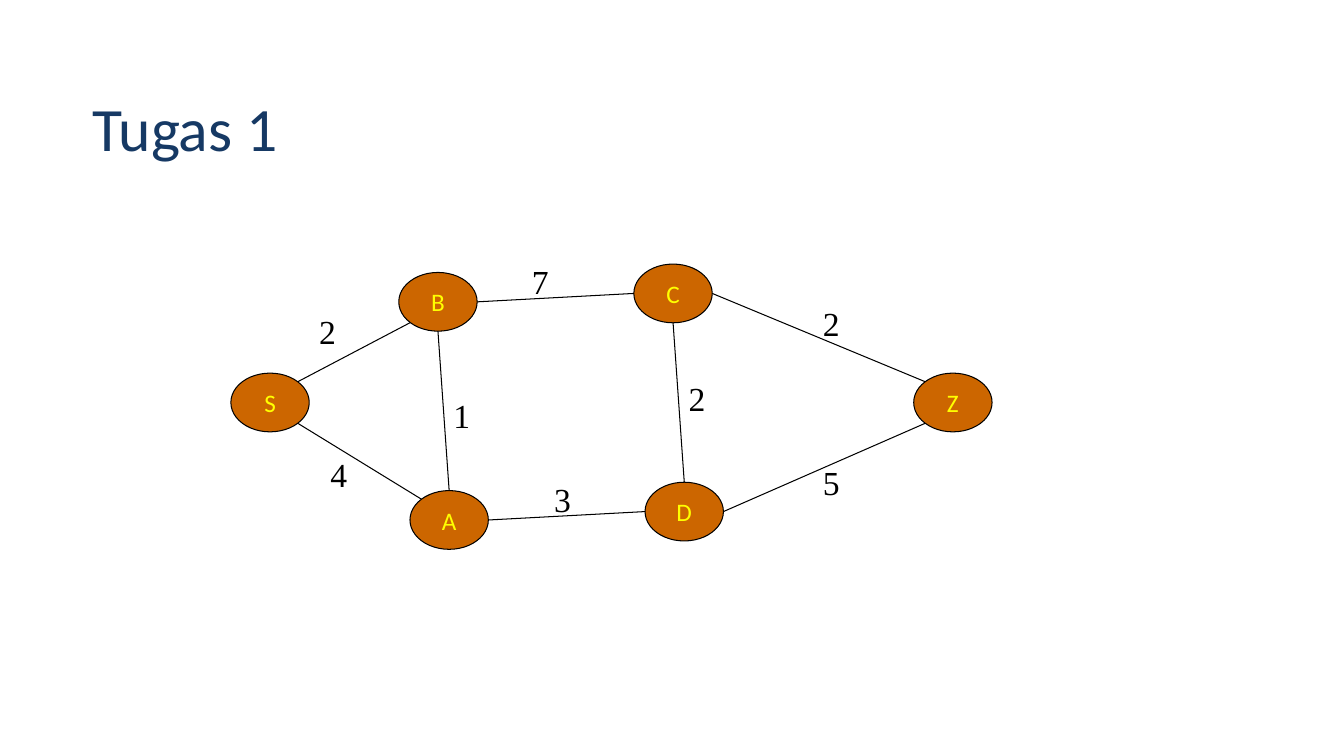
from math import cos, radians, sin

from lxml.etree import SubElement
from pptx import Presentation
from pptx.dml.color import RGBColor
from pptx.enum.shapes import MSO_CONNECTOR, MSO_SHAPE
from pptx.enum.text import MSO_ANCHOR, MSO_AUTO_SIZE, PP_ALIGN
from pptx.oxml.ns import qn
from pptx.util import Inches, Pt

COLORS = {"title": "163964", "node": "CC6600", "letter": "FFFF00", "ink": "000000"}
FONTS = {
    "title": {"name": "Calibri", "size": Pt(44)},
    "letter": {"name": "Calibri", "size": Pt(18)},
    "ink": {"name": "Times New Roman", "size": Pt(24)},
}
TITLE_BOX = [Inches(n) for n in (0.82, 0.68, 9.67, 1.25)]
GRAPH_BOX = [Inches(n) for n in (2.29, 2.62, 7.55, 2.83)]
COLUMNS, ROWS, NODE_SPAN = 68, 34, 7
WEIGHT_SIZE = Inches(0.37), Inches(0.51)

NODES = {"S": (0, 13), "A": (16, 27), "B": (15, 1), "C": (36, 0), "D": (37, 26), "Z": (61, 13)}
ANGLES = {"right": 0, "lower right": 45, "bottom": 90, "lower left": 135,
          "left": 180, "upper left": 225, "top": 270, "upper right": 315}
EDGES = [
    ("S", "upper right", "B", "lower left", "2", (7, 5)),
    ("A", "top", "B", "bottom", "1", (19, 15)),
    ("S", "lower right", "A", "upper left", "4", (8, 22)),
    ("B", "right", "C", "left", "7", (26, -1)),
    ("D", "left", "A", "right", "3", (28, 25)),
    ("C", "right", "Z", "upper left", "2", (52, 4)),
    ("D", "top", "C", "bottom", "2", (40, 13)),
    ("D", "right", "Z", "lower left", "5", (52, 23)),
]


def color(role):
    """Return the colour of a role."""
    return RGBColor.from_string(COLORS[role])


def write(holder, wording, role, frame_format, paragraph_format):
    """Fill a shape with one styled paragraph."""
    frame = holder.text_frame
    paragraph = frame.paragraphs[0]
    paragraph.text = wording
    for target, values in ((frame, frame_format), (paragraph, paragraph_format),
                           (paragraph.font, FONTS[role])):
        for attribute, value in values.items():
            setattr(target, attribute, value)
    paragraph.font.color.rgb = color(role)


def outline(line):
    """Give a line the thin black stroke."""
    line.color.rgb = color("ink")
    line.width = Pt(0.75)


def add_title(slide, box):
    """Place the heading in its box."""
    write(slide.shapes.add_textbox(*box), "Tugas 1", "title",
          {"word_wrap": True, "vertical_anchor": MSO_ANCHOR.MIDDLE}, {"line_spacing": 0.9})


def add_graph(slide, box):
    """Place the weighted graph on a grid inside its box."""
    left, top, width, height = box
    column, row = width / COLUMNS, height / ROWS

    def cell(x, y):
        """Return the slide position of a grid point."""
        return round(left + x * column), round(top + y * row)

    def rim(node, side):
        """Return the point on a side of a node."""
        x, y = NODES[node]
        angle, radius = radians(ANGLES[side]), NODE_SPAN / 2
        return cell(x + radius * (1 + cos(angle)), y + radius * (1 + sin(angle)))

    for letter, position in NODES.items():
        node = slide.shapes.add_shape(MSO_SHAPE.OVAL, *cell(*position),
                                      round(NODE_SPAN * column), round(NODE_SPAN * row))
        node.shadow.inherit = False
        node.fill.solid()
        node.fill.fore_color.rgb = color("node")
        outline(node.line)
        write(node, letter, "letter",
              {"word_wrap": False, "vertical_anchor": MSO_ANCHOR.MIDDLE},
              {"alignment": PP_ALIGN.CENTER})

    for start, start_side, end, end_side, weight, position in EDGES:
        edge = slide.shapes.add_connector(MSO_CONNECTOR.STRAIGHT, *rim(start, start_side),
                                          *rim(end, end_side))
        outline(edge.line)
        SubElement(edge._element.spPr, qn("a:effectLst"))
        write(slide.shapes.add_textbox(*cell(*position), *WEIGHT_SIZE), weight, "ink",
              {"word_wrap": False, "auto_size": MSO_AUTO_SIZE.SHAPE_TO_FIT_TEXT}, {})


def main():
    """Build and save the slide."""
    deck = Presentation()
    deck.slide_width, deck.slide_height = Inches(13.33), Inches(7.5)
    slide = deck.slides.add_slide(deck.slide_layouts[6])
    add_title(slide, TITLE_BOX)
    add_graph(slide, GRAPH_BOX)
    deck.save("out.pptx")


if __name__ == "__main__":
    main()
